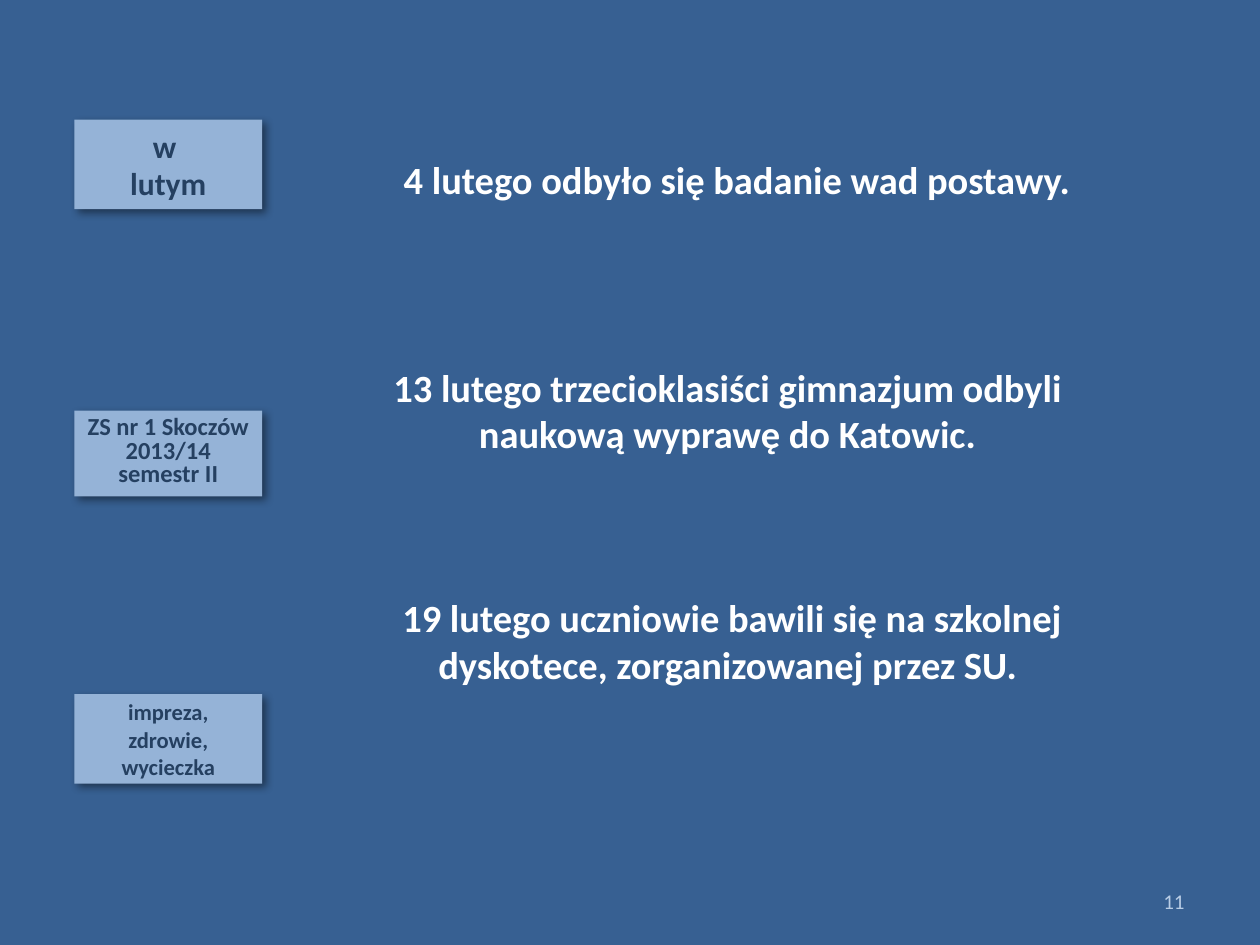
"""Build the February slide of a school-year chronicle."""
from dataclasses import dataclass

from lxml.etree import SubElement
from pptx import Presentation
from pptx.dml.color import RGBColor
from pptx.enum.shapes import MSO_SHAPE
from pptx.enum.text import MSO_ANCHOR, MSO_AUTO_SIZE, PP_ALIGN
from pptx.oxml.ns import qn
from pptx.util import Pt

COLORS = {
    "background": "376092",
    "label": "95B3D7",
    "label_text": "254061",
    "event": "FFFFFF",
    "number": "B9CDE5",
    "shadow": "000000",
}
FONT = "Calibri"
LABEL_LEFT, LABEL_WIDTH = 42.5, 107.3
EVENT_SIZE = 22


@dataclass
class Label:
    top: float
    height: float
    lines: list[str]
    size: float
    anchor: MSO_ANCHOR = MSO_ANCHOR.MIDDLE
    spacing: float | None = None


@dataclass
class Event:
    left: float
    top: float
    width: float
    height: float
    text: str


LABELS = [
    Label(68.4, 51.1, ["w ", "lutym"], 18),
    Label(234.7, 49, ["ZS nr 1 Skoczów 2013/14", "semestr II"], 14, MSO_ANCHOR.TOP, 0.8),
    Label(396.7, 51.1, ["impreza, zdrowie, wycieczka"], 12.9),
]
EVENTS = [
    Event(210.2, 85.7, 421.9, 33.8, "4 lutego odbyło się badanie wad postawy."),
    Event(210.2, 204.5, 411.1, 60.5,
          "13 lutego trzecioklasiści gimnazjum odbyli naukową wyprawę do Katowic."),
    Event(215.3, 336.2, 406.1, 60.5,
          "19 lutego uczniowie bawili się na szkolnej dyskotece, zorganizowanej przez SU. "),
]


def rgb(name: str) -> RGBColor:
    return RGBColor.from_string(COLORS[name])


def write(sp, lines: list[str], size: float, color: str, bold: bool = True,
          align: PP_ALIGN = PP_ALIGN.CENTER, anchor: MSO_ANCHOR = MSO_ANCHOR.TOP,
          spacing: float | None = None) -> None:
    tf = sp.text_frame
    tf.word_wrap = True
    tf.vertical_anchor = anchor
    tf.text = "\n".join(lines)
    for p in tf.paragraphs:
        p.alignment = align
        p.line_spacing = spacing
        p.font.name = FONT
        p.font.size = Pt(size)
        p.font.bold = bold
        p.font.color.rgb = rgb(color)


def add_shadow(sp) -> None:
    sp.shadow.inherit = False
    effects = sp._element.spPr.find(qn("a:effectLst"))
    outer = SubElement(effects, qn("a:outerShdw"), blurRad=str(Pt(5)), dist=str(Pt(3)),
                       dir=str(45 * 60000), algn="tl", rotWithShape="0")
    color = SubElement(outer, qn("a:srgbClr"), val=COLORS["shadow"])
    SubElement(color, qn("a:alpha"), val="43000")


def add_label(s, label: Label) -> None:
    sp = s.shapes.add_shape(MSO_SHAPE.RECTANGLE, Pt(LABEL_LEFT), Pt(label.top),
                            Pt(LABEL_WIDTH), Pt(label.height))
    sp.fill.solid()
    sp.fill.fore_color.rgb = rgb("label")
    sp.line.fill.background()
    add_shadow(sp)
    write(sp, label.lines, label.size, "label_text", anchor=label.anchor, spacing=label.spacing)


def add_event(s, event: Event) -> None:
    sp = s.shapes.add_textbox(Pt(event.left), Pt(event.top), Pt(event.width), Pt(event.height))
    write(sp, [event.text], EVENT_SIZE, "event")
    sp.text_frame.auto_size = MSO_AUTO_SIZE.SHAPE_TO_FIT_TEXT


def add_number(s, number: int) -> None:
    sp = s.shapes.add_textbox(Pt(516.2), Pt(500.4), Pt(167.8), Pt(28.8))
    write(sp, [str(number)], 12, "number", bold=False, align=PP_ALIGN.RIGHT,
          anchor=MSO_ANCHOR.MIDDLE)


def main() -> None:
    prs = Presentation()
    prs.slide_width, prs.slide_height = Pt(720), Pt(540)
    s = prs.slides.add_slide(prs.slide_layouts[6])
    s.background.fill.solid()
    s.background.fill.fore_color.rgb = rgb("background")
    for label in LABELS:
        add_label(s, label)
    for event in EVENTS:
        add_event(s, event)
    add_number(s, 11)
    prs.save("out.pptx")


if __name__ == "__main__":
    main()
